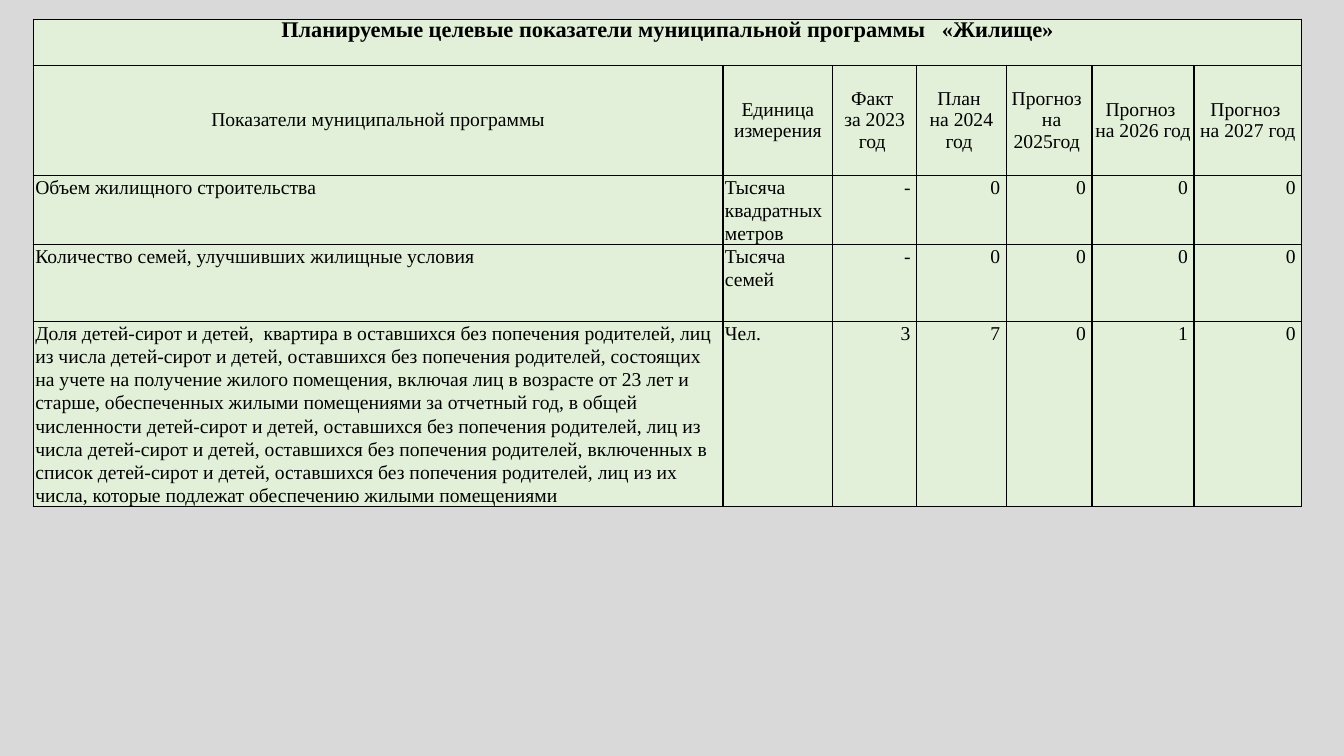
from lxml.etree import SubElement
from pptx import Presentation
from pptx.dml.color import RGBColor as Rgb
from pptx.enum.text import MSO_ANCHOR as Anchor, PP_ALIGN as Align
from pptx.oxml.ns import qn
from pptx.util import Inches, Pt

HUES = {"back": "D9D9D9", "cell": "E2F0D9", "ink": "000000"}

COLS = [51.31, 8.18, 6.23, 6.68, 6.38, 7.58, 8.03]
ROWS = [6.13, 14.53, 9.13, 10.13, 24.53]

TITLE = "Планируемые целевые показатели муниципальной программы   «Жилище»"
HEADS = [
    "Показатели муниципальной программы",
    "Единица измерения",
    "Факт \nза 2023 год ",
    "План \nна 2024 год ",
    "Прогноз \n на 2025год ",
    "Прогноз \nна 2026 год ",
    "Прогноз \n на 2027 год ",
]
GOALS = [
    ["Объем жилищного строительства", "Тысяча квадратных метров",
     "-", "0", "0", "0", "0"],
    ["Количество семей, улучшивших жилищные условия", "Тысяча семей",
     "-", "0", "0", "0", "0"],
    ["Доля детей-сирот и детей,  квартира в оставшихся без попечения "
     "родителей, лиц из числа детей-сирот и детей, оставшихся без попечения "
     "родителей, состоящих на учете на получение жилого помещения, включая "
     "лиц в возрасте от 23 лет и старше, обеспеченных жилыми помещениями за "
     "отчетный год, в общей численности детей-сирот и детей, оставшихся без "
     "попечения родителей, лиц из числа детей-сирот и детей, оставшихся без "
     "попечения родителей, включенных в список детей-сирот и детей, "
     "оставшихся без попечения родителей, лиц из их числа, которые подлежат "
     "обеспечению жилыми помещениями", "Чел.",
     "3", "7", "0", "1", "0"],
]


class Deck:
    font = "Times New Roman"

    def __init__(self):
        self.show = Presentation()
        self.show.slide_width = Inches(13.33)
        self.show.slide_height = Inches(7.5)
        self.slide = self.show.slides.add_slide(self.show.slide_layouts[6])
        self.paint(self.slide.background.fill, "back")

    def paint(self, fill, hue):
        fill.solid()
        fill.fore_color.rgb = Rgb.from_string(HUES[hue])

    def across(self, share):
        return int(self.show.slide_width * share / 100)

    def down(self, share):
        return int(self.show.slide_height * share / 100)

    def table(self, left, top, cols, rows):
        frame = self.slide.shapes.add_table(
            len(rows), len(cols), self.across(left), self.down(top),
            self.across(sum(cols)), self.down(sum(rows)))
        grid = frame.table
        grid.first_row = grid.horz_banding = False
        for col, share in zip(grid.columns, cols):
            col.width = self.across(share)
        for row, share in zip(grid.rows, rows):
            row.height = self.down(share)
        for cell in grid.iter_cells():
            self.border(cell)
            self.paint(cell.fill, "cell")
        return grid

    def border(self, cell):
        props = cell._tc.get_or_add_tcPr()
        for side in ("a:lnL", "a:lnR", "a:lnT", "a:lnB"):
            line = SubElement(props, qn(side), w=str(Pt(1)))
            fill = SubElement(line, qn("a:solidFill"))
            SubElement(fill, qn("a:srgbClr"), val=HUES["ink"])

    def label(self, cell, text, align, anchor=Anchor.TOP, space=1.07,
              left=0, right=0, size=14, bold=False):
        cell.vertical_anchor = anchor
        cell.margin_left = self.across(left)
        cell.margin_right = self.across(right)
        cell.margin_top = cell.margin_bottom = 0
        cell.text_frame.text = text
        for para in cell.text_frame.paragraphs:
            para.alignment = align
            para.line_spacing = space
            for run in para.runs:
                run.font.name = self.font
                run.font.size = Pt(size)
                run.font.bold = bold
                run.font.color.rgb = Rgb.from_string(HUES["ink"])


def main():
    deck = Deck()
    grid = deck.table(2.48, 2.53, COLS, ROWS)
    grid.cell(0, 0).merge(grid.cell(0, len(COLS) - 1))
    deck.label(grid.cell(0, 0), TITLE, Align.CENTER, space=0.9,
               size=16, bold=True)
    for col, head in enumerate(HEADS):
        deck.label(grid.cell(1, col), head, Align.CENTER, Anchor.MIDDLE,
                   space=1.0, left=0.08, right=0.08)
    for row, goal in enumerate(GOALS, 2):
        for col, text in enumerate(goal):
            if col < 2:
                deck.label(grid.cell(row, col), text, Align.LEFT, left=0.15)
            else:
                deck.label(grid.cell(row, col), text, Align.RIGHT, right=0.45)
    deck.show.save("out.pptx")


if __name__ == "__main__":
    main()
